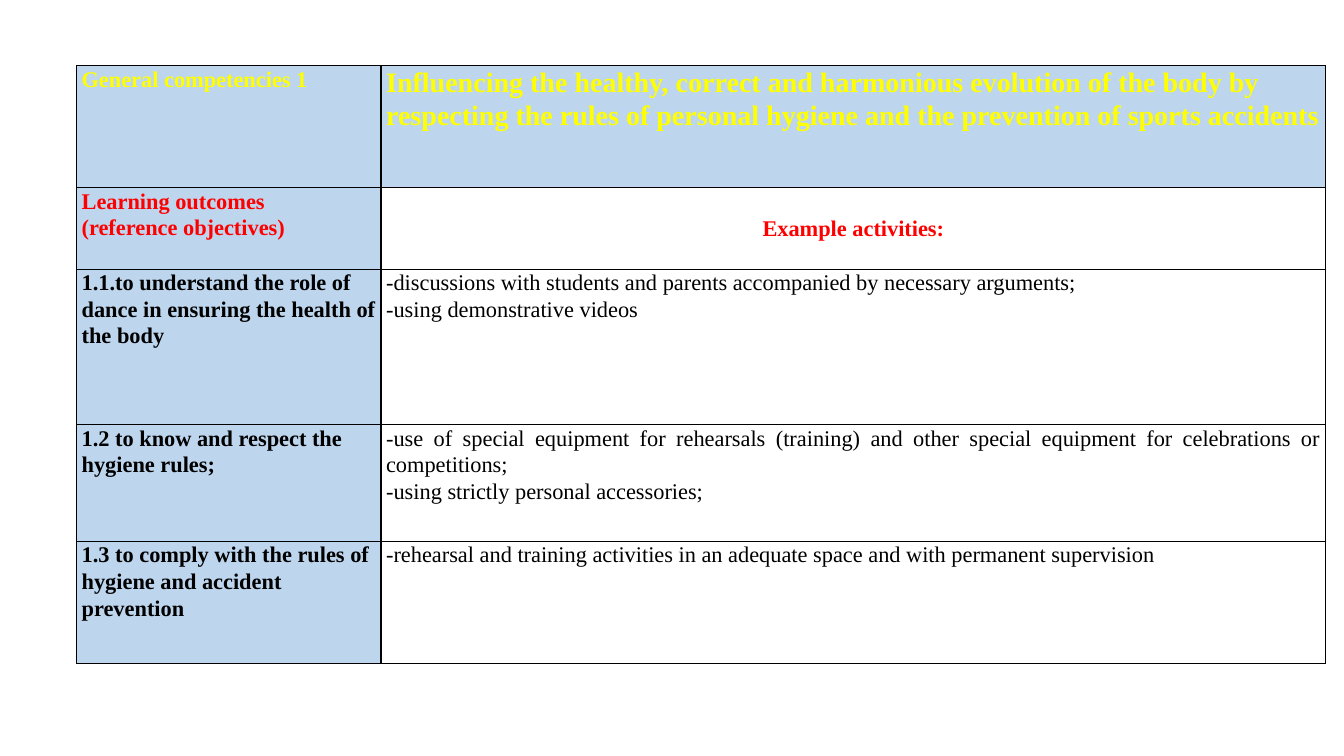
from dataclasses import dataclass

from lxml.etree import SubElement
from pptx import Presentation
from pptx.dml.color import RGBColor
from pptx.enum.text import MSO_ANCHOR, PP_ALIGN
from pptx.oxml.ns import qn
from pptx.util import Inches, Pt


@dataclass(frozen=True)
class Theme:
    font: str = "Times New Roman"
    heading_size: int = 20
    body_size: int = 16
    line_spacing: float = 1.07
    border_width: float = 1
    heading: str = "FFFF00"
    label: str = "FF0000"
    text: str = "000000"
    border: str = "000000"
    panel: str = "BDD6EE"


THEME = Theme()
COLUMN_WIDTHS = (3.02, 9.37)
ROW_HEIGHTS = (1.21, 0.81, 1.54, 1.16, 1.21)

COMPETENCY = (
    "General competencies 1",
    "Influencing the healthy, correct and harmonious evolution of the body by "
    "respecting the rules of personal hygiene and the prevention of sports accidents",
)
COLUMN_LABELS = (["Learning outcomes", "(reference objectives)"], ["Example activities:"])
OUTCOMES = [
    ("1.1.to understand the role of dance in ensuring the health of the body",
     ["-discussions with students and parents accompanied by necessary arguments;",
      "-using demonstrative videos"]),
    ("1.2 to know and respect the hygiene rules;",
     ["-use of special equipment for rehearsals (training) and other special equipment "
      "for celebrations or competitions;",
      "-using strictly personal accessories;"]),
    ("1.3 to comply with the rules of hygiene and accident prevention",
     ["-rehearsal and training activities in an adequate space and with permanent supervision"]),
]


def write(cell, lines, size=THEME.body_size, color=THEME.text, bold=False,
          align=PP_ALIGN.LEFT, anchor=MSO_ANCHOR.TOP):
    cell.vertical_anchor = anchor
    tf = cell.text_frame
    for i, line in enumerate(lines):
        p = tf.add_paragraph() if i else tf.paragraphs[0]
        p.alignment = align
        p.line_spacing = THEME.line_spacing
        r = p.add_run()
        r.text = line
        r.font.name = THEME.font
        r.font.size = Pt(size)
        r.font.bold = bold
        r.font.color.rgb = RGBColor.from_string(color)


def style_cell(cell, fill=None):
    """Set margins, borders and the optional fill of a cell."""
    cell.margin_left = cell.margin_right = Inches(0.05)
    cell.margin_top = cell.margin_bottom = 0
    tcPr = cell._tc.get_or_add_tcPr()
    for side in ("a:lnL", "a:lnR", "a:lnT", "a:lnB"):
        ln = SubElement(tcPr, qn(side), w=str(Pt(THEME.border_width)))
        SubElement(SubElement(ln, qn("a:solidFill")), qn("a:srgbClr"), val=THEME.border)
    if fill:
        cell.fill.solid()
        cell.fill.fore_color.rgb = RGBColor.from_string(fill)
    else:
        cell.fill.background()


def add_competency_table(s, left, top):
    table = s.shapes.add_table(
        len(ROW_HEIGHTS), len(COLUMN_WIDTHS), Inches(left), Inches(top),
        Inches(sum(COLUMN_WIDTHS)), Inches(sum(ROW_HEIGHTS))).table
    table.first_row = table.horz_banding = False
    for column, width in zip(table.columns, COLUMN_WIDTHS):
        column.width = Inches(width)
    for i, height in enumerate(ROW_HEIGHTS):
        table.rows[i].height = Inches(height)
        style_cell(table.cell(i, 0), THEME.panel)
        style_cell(table.cell(i, 1), THEME.panel if i == 0 else None)

    name, description = COMPETENCY
    write(table.cell(0, 0), [name], color=THEME.heading, bold=True)
    write(table.cell(0, 1), [description], size=THEME.heading_size,
          color=THEME.heading, bold=True)

    outcomes_label, activities_label = COLUMN_LABELS
    write(table.cell(1, 0), outcomes_label, color=THEME.label, bold=True)
    write(table.cell(1, 1), activities_label, color=THEME.label, bold=True,
          align=PP_ALIGN.CENTER, anchor=MSO_ANCHOR.MIDDLE)

    for i, (outcome, activities) in enumerate(OUTCOMES, start=2):
        write(table.cell(i, 0), [outcome], bold=True)
        write(table.cell(i, 1), activities, align=PP_ALIGN.JUSTIFY)


def main():
    prs = Presentation()
    prs.slide_width, prs.slide_height = Inches(13.33), Inches(7.5)
    s = prs.slides.add_slide(prs.slide_layouts[6])
    add_competency_table(s, 0.76, 0.65)
    prs.save("out.pptx")


if __name__ == "__main__":
    main()
